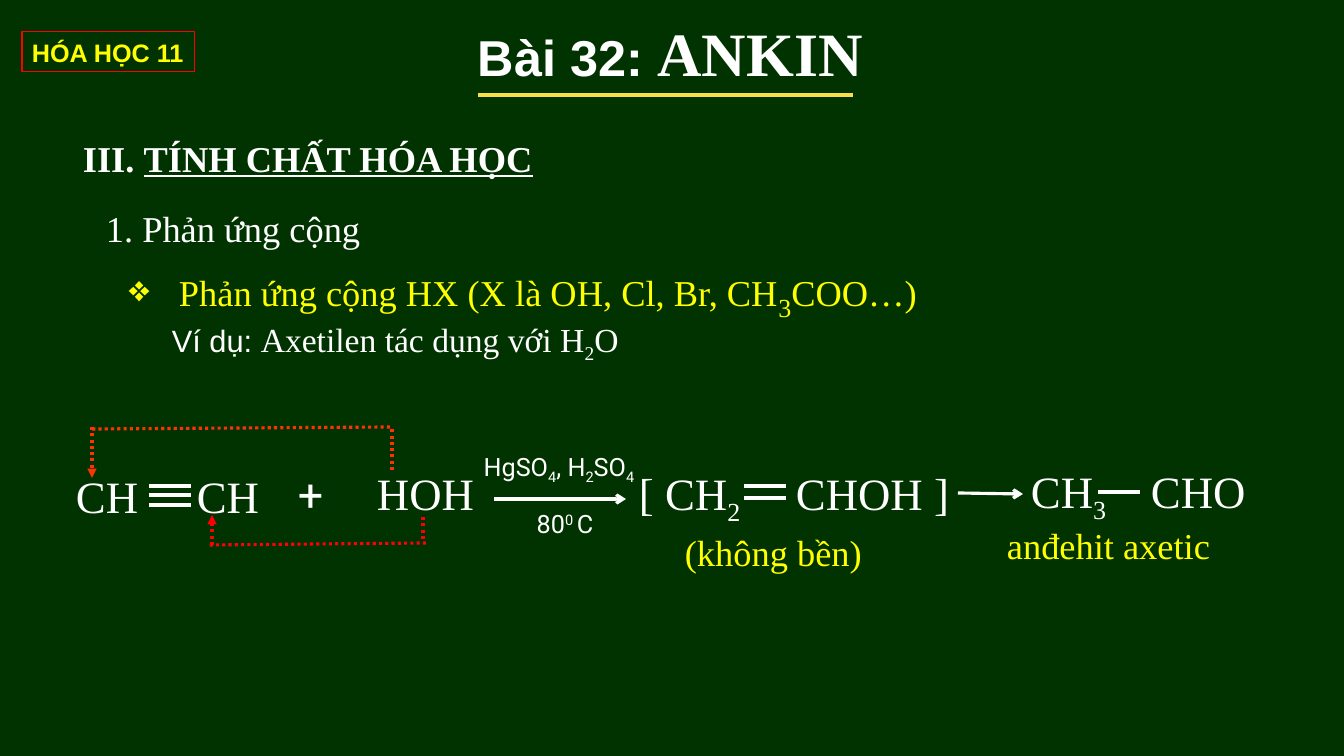
"""Build the chemistry slide on the addition reactions of alkynes."""
from dataclasses import dataclass, replace

from lxml.etree import SubElement
from pptx import Presentation
from pptx.dml.color import RGBColor
from pptx.enum.dml import MSO_LINE
from pptx.enum.shapes import MSO_CONNECTOR, MSO_SHAPE
from pptx.enum.text import MSO_ANCHOR, MSO_AUTO_SIZE, PP_ALIGN
from pptx.oxml.ns import qn
from pptx.slide import Slide
from pptx.util import Emu, Pt

PX_PER_INCH = 100.8
SERIF, SANS, ROBOTO = "Times New Roman", "Arial", "Roboto"
WHITE, YELLOW, RED, ORANGE = "FFFFFF", "FFFF00", "FF0000", "FF3300"
GREEN, GOLD = "003300", "FADD4D"


@dataclass(frozen=True)
class Run:
    """A stretch of text in one format."""
    text: str
    size: int = 32
    font: str = SERIF
    color: str = WHITE
    bold: bool = False
    underline: bool = False
    baseline: int = 0


@dataclass(frozen=True)
class Label:
    """A text box with one paragraph."""
    x: int
    y: int
    w: int
    h: int
    runs: list[Run]
    wrap: bool = True
    center: bool = False
    border: str = ""
    bullet: str = ""
    tab: int = 0


@dataclass(frozen=True)
class Line:
    """A straight line, with an optional arrowhead at its end."""
    x1: int
    y1: int
    x2: int
    y2: int
    color: str = WHITE
    width: float = 2.25
    dotted: bool = False
    head: str = ""


def px(n: float) -> Emu:
    """Turn pixels into EMU."""
    return Emu(round(n * 914400 / PX_PER_INCH))


def rgb(color: str) -> RGBColor:
    """Turn a hex string into a colour."""
    return RGBColor.from_string(color)


def formula(*parts: str, size: int = 32, font: str = SERIF, color: str = WHITE) -> list[Run]:
    """Make runs in which every second part is a subscript."""
    return [Run(t, size, font, color, baseline=-25 * (i % 2)) for i, t in enumerate(parts)]


def add_label(s: Slide, label: Label) -> None:
    """Draw a label, framed if it has a border."""
    box = px(label.x), px(label.y), px(label.w), px(label.h)
    if label.border:
        sp = s.shapes.add_shape(MSO_SHAPE.RECTANGLE, *box)
        sp.shadow.inherit = False
        sp.fill.background()
        sp.line.color.rgb = rgb(label.border)
        sp.line.width = Pt(0.75)
    else:
        sp = s.shapes.add_textbox(*box)
    tf = sp.text_frame
    tf.word_wrap = label.wrap
    tf.auto_size = MSO_AUTO_SIZE.NONE if label.wrap else MSO_AUTO_SIZE.SHAPE_TO_FIT_TEXT
    tf.vertical_anchor = MSO_ANCHOR.TOP
    p = tf.paragraphs[0]
    p.alignment = PP_ALIGN.CENTER if label.center else PP_ALIGN.LEFT
    pPr = p._p.get_or_add_pPr()
    if label.bullet:
        pPr.set("marL", str(px(50)))
        pPr.set("indent", str(px(-50)))
        SubElement(pPr, qn("a:buChar"), char=label.bullet)
    if label.tab:
        tabs = SubElement(pPr, qn("a:tabLst"))
        SubElement(tabs, qn("a:tab"), pos=str(px(label.tab)), algn="l")
    for run in label.runs:
        r = p.add_run()
        r.text = run.text
        r.font.size = Pt(run.size)
        r.font.name = run.font
        r.font.color.rgb = rgb(run.color)
        r.font.bold = run.bold
        r.font.underline = run.underline
        if run.baseline:
            r._r.get_or_add_rPr().set("baseline", str(run.baseline * 1000))


def add_line(s: Slide, line: Line) -> None:
    """Draw a line."""
    c = s.shapes.add_connector(
        MSO_CONNECTOR.STRAIGHT, px(line.x1), px(line.y1), px(line.x2), px(line.y2))
    c.line.color.rgb = rgb(line.color)
    c.line.width = Pt(line.width)
    if line.dotted:
        c.line.dash_style = MSO_LINE.ROUND_DOT
    if line.head:
        SubElement(c.line._get_or_add_ln(), qn("a:tailEnd"), type=line.head)
    SubElement(c._element.spPr, qn("a:effectLst"))


def bonds(x: int, *ys: int) -> list[Line]:
    """Make the parallel strokes of a chemical bond."""
    return [Line(x, y, x + 42, y) for y in ys]


HEADING = Run("III. ", 26, bold=True)
HX = formula("Phản ứng cộng HX (X là OH, Cl, Br, CH", "3", "COO…)", size=26, color=YELLOW)
HX[1] = replace(HX[1], size=32)

HEADINGS = [
    Label(22, 32, 173, 40, [Run("HÓA HỌC 11", 18, SANS, YELLOW, True)], wrap=False, border=RED),
    Label(468, 10, 408, 85, [Run("Bài 32: ", 36, SANS, bold=True), Run("ANKIN", 44, bold=True)],
          wrap=False),
    Label(73, 131, 474, 54, [HEADING, replace(HEADING, text="TÍNH CHẤT HÓA HỌC", underline=True)],
          wrap=False),
    Label(96, 201, 277, 54, [Run("1. Phản ứng cộng", 26)], wrap=False),
    Label(119, 257, 817, 54, HX, wrap=False, bullet="❖"),
    Label(162, 314, 473, 50,
          [Run("Ví dụ: ", 22, SANS), *formula("Axetilen tác dụng với H", "2", "O", size=24)],
          wrap=False),
]

REACTION = [
    Label(66, 464, 93, 68, formula("CH")),
    Label(187, 464, 92, 68, formula("CH")),
    Label(288, 462, 50, 68, formula("+", font=ROBOTO)),
    Label(367, 461, 119, 68, formula("HOH")),
    Label(629, 461, 336, 68, formula("[ CH", "2", "\tCHOH ]"), tab=157),
    Label(1021, 459, 241, 68, formula("CH", "3", "\tCHO"), tab=120),
    Label(675, 525, 229, 58, formula("(không bền)", size=26, color=YELLOW)),
    Label(997, 518, 256, 58, formula("anđehit axetic", size=26, color=YELLOW)),
    Label(463, 446, 192, 50, formula("HgSO", "4", ", H", "2", "SO", "4", size=18, font=ROBOTO),
          center=True),
    Label(512, 503, 106, 50,
          [Run("80", 18, ROBOTO), Run("0 ", 18, ROBOTO, baseline=30), Run("C", 18, ROBOTO)],
          center=True),
]

LINES = [
    Line(478, 95, 853, 95, GOLD, 3.5),
    *bonds(149, 486, 495, 505),
    *bonds(744, 486, 498),
    *bonds(1098, 492),
    Line(494, 499, 626, 499, head="arrow"),
    Line(958, 493, 1023, 494, head="arrow"),
    Line(423, 539, 423, 516, RED, dotted=True),
    Line(426, 543, 208, 545, RED, dotted=True),
    Line(212, 545, 212, 515, RED, dotted=True, head="triangle"),
    Line(392, 470, 392, 427, ORANGE, dotted=True),
    Line(390, 427, 92, 429, ORANGE, dotted=True),
    Line(92, 427, 92, 478, ORANGE, dotted=True, head="triangle"),
]


def main() -> None:
    """Build and save the slide."""
    prs = Presentation()
    prs.slide_width, prs.slide_height = px(1344), px(756)
    s = prs.slides.add_slide(prs.slide_layouts[6])
    s.background.fill.solid()
    s.background.fill.fore_color.rgb = rgb(GREEN)
    for label in HEADINGS + REACTION:
        add_label(s, label)
    for line in LINES:
        add_line(s, line)
    prs.save("out.pptx")


if __name__ == "__main__":
    main()
